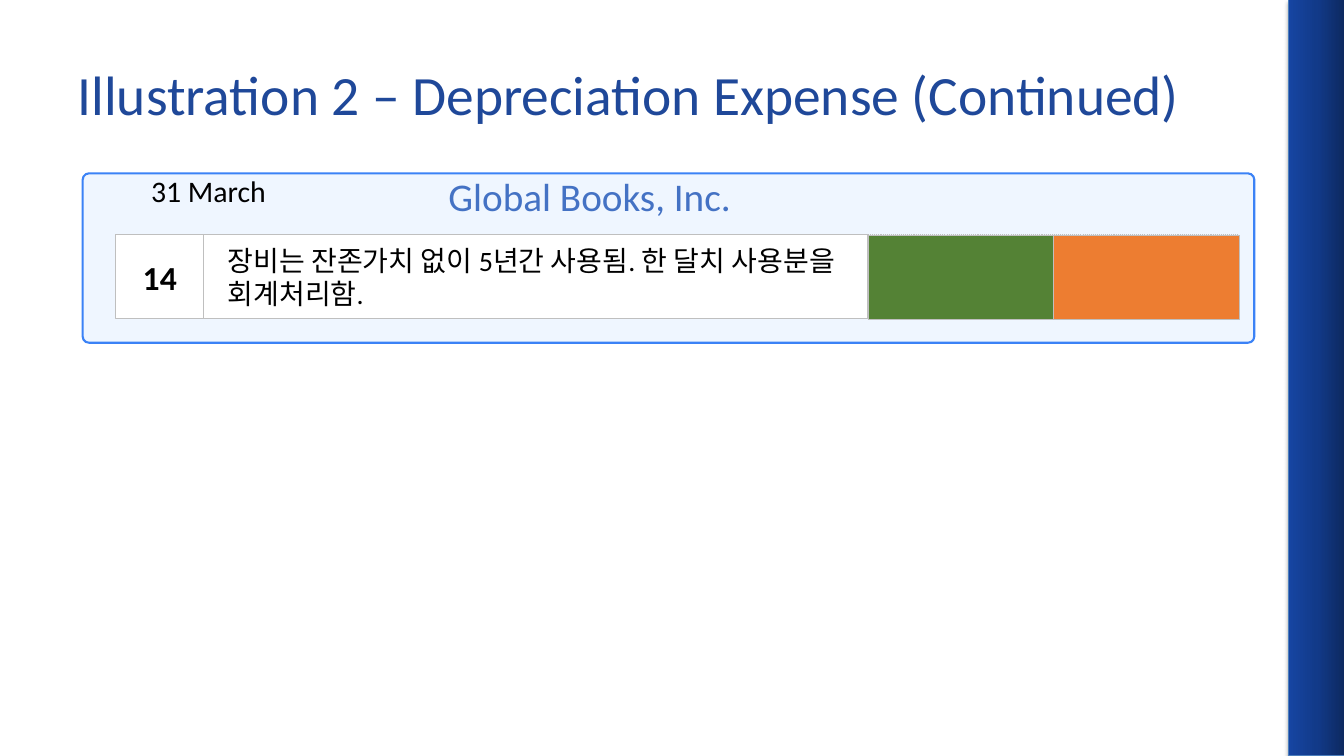
"""Build the depreciation expense illustration slide."""
from copy import deepcopy
from dataclasses import dataclass

from lxml.etree import fromstring
from pptx import Presentation
from pptx.dml.color import RGBColor
from pptx.enum.dml import MSO_LINE
from pptx.enum.shapes import MSO_SHAPE
from pptx.enum.text import MSO_ANCHOR, MSO_AUTO_SIZE, PP_ALIGN
from pptx.oxml.ns import nsdecls, qn
from pptx.util import Inches, Pt


@dataclass(frozen=True)
class Theme:
    font: str = "Calibri"
    title: str = "1F4899"
    company: str = "4472C4"
    ink: str = "000000"
    white: str = "FFFFFF"
    panel: str = "EFF6FF"
    panel_line: str = "3B82F6"
    cell_line: str = "BFBFBF"
    side_line: str = "4B7EBC"
    side_stops: tuple = ((0, "0D2960"), (0.5, "123A89"), (1, "1645A2"))
    pale_cells: tuple = ("E2F0D9", "FBE5D6")
    strong_cells: tuple = ("548235", "ED7D31")
    title_size: float = 39.6
    company_size: float = 28
    number_size: float = 24
    date_size: float = 21.3
    body_size: float = 20


class Page:
    def __init__(self, deck, theme):
        self.theme = theme
        self.slide = deck.slides.add_slide(deck.slide_layouts[5])

    def set_text(self, shape, text, size, color, bold=False, align=PP_ALIGN.LEFT):
        shape.text_frame.text = text
        para = shape.text_frame.paragraphs[0]
        para.alignment = align
        font = para.font
        font.name, font.size, font.bold = self.theme.font, Pt(size), bold
        font.color.rgb = RGBColor.from_string(color)
        return para

    def title(self, text, *place):
        shape = self.slide.shapes.title
        shape.left, shape.top, shape.width, shape.height = map(Inches, place)
        shape.text_frame.vertical_anchor = MSO_ANCHOR.MIDDLE
        shape.text_frame.auto_size = MSO_AUTO_SIZE.NONE
        self.set_text(shape, text, self.theme.title_size, self.theme.title)

    def label(self, text, size, color, *place, wrap=True):
        box = self.slide.shapes.add_textbox(*map(Inches, place))
        box.text_frame.word_wrap = wrap
        box.text_frame.auto_size = MSO_AUTO_SIZE.SHAPE_TO_FIT_TEXT
        self.set_text(box, text, size, color)

    def block(self, fill, line, *place, weight=0.75, kind=MSO_SHAPE.RECTANGLE):
        shape = self.slide.shapes.add_shape(kind, *map(Inches, place))
        shape.shadow.inherit = False
        shape.fill.solid()
        shape.fill.fore_color.rgb = RGBColor.from_string(fill)
        shape.line.color.rgb = RGBColor.from_string(line)
        shape.line.width = Pt(weight)
        shape.text_frame.vertical_anchor = MSO_ANCHOR.MIDDLE
        return shape

    def panel(self, *place):
        shape = self.block(self.theme.panel, self.theme.panel_line, *place,
                           weight=1.5, kind=MSO_SHAPE.ROUNDED_RECTANGLE)
        shape.adjustments[0] = 0.037

    def cell(self, fill, *place):
        return self.block(fill, self.theme.cell_line, *place)

    def side_bar(self, *place):
        bar = self.block(self.theme.white, self.theme.side_line, *place)
        bar.fill.gradient()
        bar.fill.gradient_angle = 180
        stop_list = bar._element.spPr.find(qn("a:gradFill")).find(qn("a:gsLst"))
        stop_list.insert(1, deepcopy(stop_list[0]))
        for stop, (position, color) in zip(bar.fill.gradient_stops, self.theme.side_stops):
            stop.position = position
            stop.color.rgb = RGBColor.from_string(color)
        effects = bar._element.spPr.find(qn("a:effectLst"))
        effects.append(fromstring(
            f'<a:outerShdw {nsdecls("a")} blurRad="{Pt(3.1)}" dist="{Pt(1.8)}" '
            'dir="5400000" rotWithShape="0"><a:srgbClr val="000000">'
            '<a:alpha val="35000"/></a:srgbClr></a:outerShdw>'))


def main():
    deck = Presentation()
    deck.slide_width, deck.slide_height = Inches(13.33), Inches(7.5)
    theme = Theme()
    page = Page(deck, theme)

    page.side_bar(12.78, 0, 0.56, 7.5)
    page.title("Illustration 2 – Depreciation Expense (Continued)", 0.67, 0.3, 12, 1.25)
    page.panel(0.82, 1.72, 11.62, 1.68)
    page.label("Global Books, Inc.", theme.company_size, theme.company,
               4.35, 1.66, 3.03, 0.57, wrap=False)

    entry = page.cell(theme.white, 2.01, 2.33, 6.6, 0.83)
    para = page.set_text(entry, "장비는 잔존가치 없이 5년간 사용됨. 한 달치 사용분을 회계처리함.",
                         theme.body_size, theme.ink)
    para._p.get_or_add_pPr().set("marL", str(Inches(0.15)))
    number = page.cell(theme.white, 1.15, 2.33, 0.87, 0.83)
    page.set_text(number, "14", theme.number_size, theme.ink, True, PP_ALIGN.CENTER)

    amount_left, amount_width = 8.61, 1.84
    for colors, top, height, dash in (
            (theme.pale_cells, 2.33, 0.82, MSO_LINE.ROUND_DOT),
            (theme.strong_cells, 2.34, 0.83, MSO_LINE.SOLID)):
        for column, color in enumerate(colors):
            amount = page.cell(color, amount_left + column * amount_width, top,
                               amount_width, height)
            amount.line.dash_style = dash

    page.label("31 March", theme.date_size, theme.ink, 1.4, 1.66, 2.21, 0.46)
    deck.save("out.pptx")


if __name__ == "__main__":
    main()
